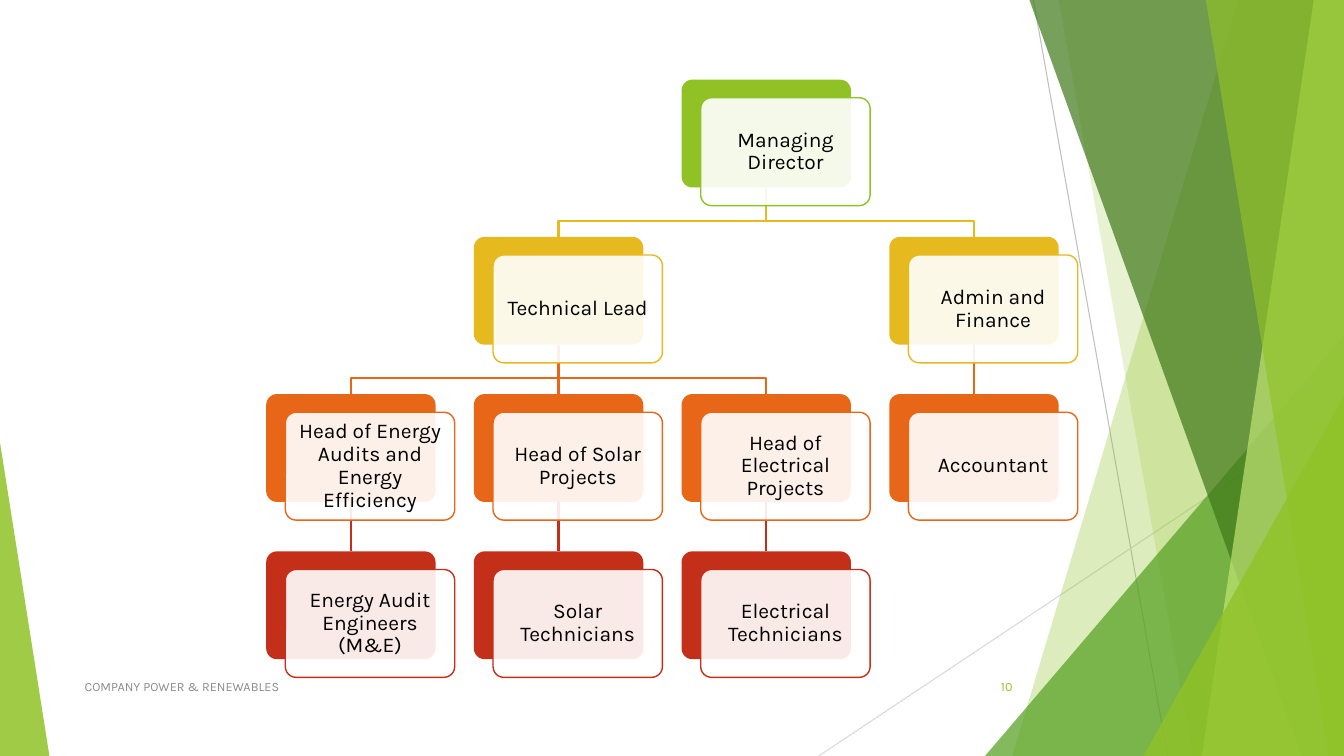
from lxml import etree
from pptx import Presentation
from pptx import util as u
from pptx.dml.color import RGBColor
from pptx.enum import shapes, text
from pptx.oxml import ns

LIME = RGBColor(0x90, 0xC2, 0x26)
LEAF = RGBColor(0x54, 0xA0, 0x21)
MOSS = RGBColor(0x3F, 0x78, 0x19)
PALE = RGBColor(0xC0, 0xE4, 0x74)
GOLD = RGBColor(0xE6, 0xB9, 0x1E)
ORANGE = RGBColor(0xE7, 0x66, 0x18)
RED = RGBColor(0xC4, 0x2F, 0x1A)
WHITE = RGBColor(0xFF, 0xFF, 0xFF)
BLACK = RGBColor(0, 0, 0)
GREY = RGBColor(0x8C, 0x8C, 0x8C)
SILVER = RGBColor(0xBF, 0xBF, 0xBF)
MIST = RGBColor(0xD9, 0xD9, 0xD9)
FONT = "Karla"
WIDE, HIGH = 13.33, 7.5

FOOTER = "COMPANY POWER & RENEWABLES"
PAGE = "10"

# role: (column, row, boss)
ROLES = {
    "Managing Director": (2, 0, None),
    "Technical Lead": (1, 1, "Managing Director"),
    "Admin and Finance": (3, 1, "Managing Director"),
    "Head of Energy Audits and Energy Efficiency": (0, 2, "Technical Lead"),
    "Head of Solar Projects": (1, 2, "Technical Lead"),
    "Head of Electrical Projects": (2, 2, "Technical Lead"),
    "Accountant": (3, 2, "Admin and Finance"),
    "Energy Audit Engineers (M&E)": (0, 3, "Head of Energy Audits and Energy Efficiency"),
    "Solar Technicians": (1, 3, "Head of Solar Projects"),
    "Electrical Technicians": (2, 3, "Head of Electrical Projects"),
}
ROW_TINTS = [LIME, GOLD, ORANGE, RED]

# Thin lines: start, end, colour
RAYS = [((10.25, 0), (11.58, HIGH), SILVER), ((WIDE, 4.03), (8.12, HIGH), MIST)]
# Bands reach the right edge: top left x, bottom left x, colour, opacity
BACK_BANDS = [(12.28, 10.04, LIME, 30), (10.5, 11.83, LIME, 20)]
FRONT_BANDS = [(10.21, 12.91, MOSS, 70), (13.03, 11.92, PALE, 70), (11.96, 13.18, LIME, 65)]
# Wedges stand on the bottom edge: left, top, width, apex, colour, opacity
BACK_WEDGE = (9.77, 3.33, 3.56, 1, LEAF, 72)
FRONT_WEDGES = [(11.34, 3.93, 1.99, 1, LIME, 80), (0, 4.39, 0.49, 0, LIME, 85)]

LEFT, TOP = 2.64, 0.79
STEP_X, STEP_Y = 2.06, 1.56
BOX_W, BOX_H = 1.68, 1.07
SHIFT_X, SHIFT_Y = 0.19, 0.18
BEND = 0.33

deck = Presentation()
deck.slide_width, deck.slide_height = u.Inches(WIDE), u.Inches(HIGH)
slide = deck.slides.add_slide(deck.slide_layouts[6])
tree = slide.shapes


def paint(shape, fill=None, alpha=100, line=None, width=1):
    shape.shadow.inherit = False
    if fill is None:
        shape.fill.background()
    else:
        shape.fill.solid()
        shape.fill.fore_color.rgb = fill
        if alpha < 100:
            tint = shape.fill._xPr.find(ns.qn("a:solidFill"))[0]
            etree.SubElement(tint, ns.qn("a:alpha"), val=str(alpha * 1000))
    if line is None:
        shape.line.fill.background()
    else:
        shape.line.color.rgb = line
        shape.line.width = u.Pt(width)


def draw_free(points, close=True, **look):
    spots = [(u.Inches(x), u.Inches(y)) for x, y in points]
    pen = tree.build_freeform(*spots[0])
    pen.add_line_segments(spots[1:], close=close)
    paint(pen.convert_to_shape(), **look)


def draw_line(start, end, tint, width):
    line = tree.add_connector(
        shapes.MSO_CONNECTOR.STRAIGHT, *[u.Inches(n) for n in (*start, *end)])
    line.line.color.rgb = tint
    line.line.width = u.Pt(width)
    etree.SubElement(line._element.spPr, ns.qn("a:effectLst"))
    return line


def draw_shape(kind, x, y, w, h, bend, **look):
    shape = tree.add_shape(kind, *[u.Inches(n) for n in (x, y, w, h)])
    shape.adjustments[0] = bend
    paint(shape, **look)
    return shape


def draw_band(top, base, tint, alpha):
    draw_free([(top, 0), (WIDE, 0), (WIDE, HIGH), (base, HIGH)], fill=tint, alpha=alpha)


def draw_wedge(x, y, w, apex, tint, alpha):
    draw_shape(shapes.MSO_SHAPE.ISOSCELES_TRIANGLE, x, y, w, HIGH - y, apex,
               fill=tint, alpha=alpha)


def write(shape, words, size=15, tint=BLACK, align=text.PP_ALIGN.CENTER,
          space=0.9, pad_x=0.06, pad_y=0.06):
    frame = shape.text_frame
    frame.word_wrap = True
    frame.vertical_anchor = text.MSO_ANCHOR.MIDDLE
    frame.margin_left = frame.margin_right = u.Inches(pad_x)
    frame.margin_top = frame.margin_bottom = u.Inches(pad_y)
    para = frame.paragraphs[0]
    para.alignment, para.line_spacing = align, space
    run = para.add_run()
    run.text = words
    run.font.name, run.font.size = FONT, u.Pt(size)
    run.font.color.rgb = tint


def corner(role):
    col, row, _ = ROLES[role]
    return LEFT + col * STEP_X, TOP + row * STEP_Y


def draw_box(role, shift_x=0, shift_y=0, **look):
    x, y = corner(role)
    return draw_shape(shapes.MSO_SHAPE.ROUNDED_RECTANGLE, x + shift_x, y + shift_y,
                      BOX_W, BOX_H, 0.1, **look)


# Backdrop
for start, end, tint in RAYS:
    draw_line(start, end, tint, 0.75)
for band in BACK_BANDS:
    draw_band(*band)
draw_wedge(*BACK_WEDGE)
for band in FRONT_BANDS:
    draw_band(*band)
for wedge in FRONT_WEDGES:
    draw_wedge(*wedge)

# Footer
for x, w, words, tint, align in [
        (0.74, 6.89, FOOTER, GREY, text.PP_ALIGN.LEFT),
        (9.39, 0.75, PAGE, LIME, text.PP_ALIGN.RIGHT)]:
    note = tree.add_textbox(u.Inches(x), u.Inches(6.61), u.Inches(w), u.Inches(0.4))
    write(note, words, size=9, tint=tint, align=align, space=1, pad_x=0.1, pad_y=0.05)

# Chart: colour blocks, then links, then the cards over both
blocks = {role: draw_box(role, fill=ROW_TINTS[row]) for role, (_, row, _) in ROLES.items()}

for role, (col, row, boss) in ROLES.items():
    if boss is None:
        continue
    boss_x, boss_y = corner(boss)
    x, y = corner(role)
    start = (boss_x + BOX_W / 2, boss_y + BOX_H)
    end = (x + BOX_W / 2, y)
    if col == ROLES[boss][0]:
        link = draw_line(start, end, ROW_TINTS[row], 1.5)
        link.begin_connect(blocks[boss], 2)
        link.end_connect(blocks[role], 0)
    else:
        turn = start[1] + BEND
        draw_free([start, (start[0], turn), (end[0], turn), end], close=False,
                  line=ROW_TINTS[row], width=1.5)

for role, (_, row, _) in ROLES.items():
    card = draw_box(role, SHIFT_X, SHIFT_Y, fill=WHITE, alpha=90, line=ROW_TINTS[row])
    write(card, role)

deck.save("out.pptx")
